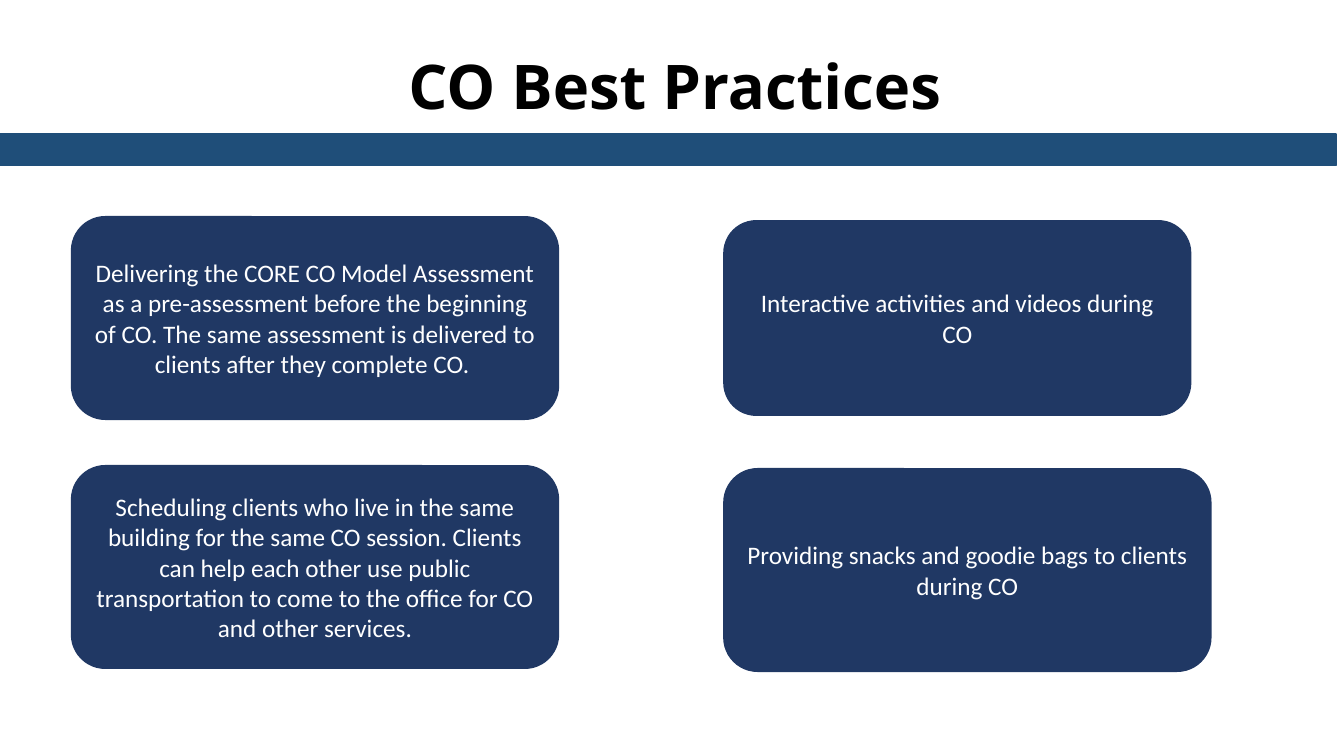
from pptx import Presentation
from pptx.dml.color import RGBColor
from pptx.enum.shapes import MSO_SHAPE
from pptx.enum.text import MSO_ANCHOR, MSO_AUTO_SIZE, PP_ALIGN
from pptx.util import Inches, Pt

RECTANGLE = MSO_SHAPE.RECTANGLE
ROUNDED = MSO_SHAPE.ROUNDED_RECTANGLE
MIDDLE = MSO_ANCHOR.MIDDLE
CENTER = PP_ALIGN.CENTER
NO_AUTOFIT = MSO_AUTO_SIZE.NONE
TITLE_ONLY = 5

COLORS = {"black": "000000", "white": "FFFFFF", "band": "1F4E79", "card": "203864"}

PRACTICES = [
    ("Delivering the CORE CO Model Assessment as a pre-assessment before the beginning of CO. "
     "The same assessment is delivered to clients after they complete CO. ",
     (0.71, 2.15, 4.83, 2.01)),
    ("Scheduling clients who live in the same building for the same CO session. "
     "Clients can help each other use public transportation to come to the office "
     "for CO and other services.",
     (0.71, 4.62, 4.83, 2.01)),
    ("Providing snacks and goodie bags to clients during CO", (7.18, 4.65, 4.83, 2.01)),
    ("Interactive activities and videos during CO", (7.18, 2.19, 4.63, 1.93)),
]


class SlideBuilder:
    title_font = "Open Sans"
    body_font = "Calibri"

    def __init__(self, slide):
        self.slide = slide

    def add_text(self, shape, text, font_name, size, color, bold=False):
        frame = shape.text_frame
        frame.word_wrap = True
        frame.auto_size = NO_AUTOFIT
        frame.vertical_anchor = MIDDLE
        paragraph = frame.paragraphs[0]
        paragraph.alignment = CENTER
        run = paragraph.add_run()
        run.text = text
        run.font.name = font_name
        run.font.size = Pt(size)
        run.font.bold = bold
        run.font.color.rgb = RGBColor.from_string(COLORS[color])
        return paragraph

    def title(self, text, box):
        title = self.slide.shapes.title
        title.left, title.top, title.width, title.height = map(Inches, box)
        paragraph = self.add_text(title, text, self.title_font, 44, "black", bold=True)
        paragraph.line_spacing = 0.9

    def block(self, kind, box, color):
        shape = self.slide.shapes.add_shape(kind, *map(Inches, box))
        shape.shadow.inherit = False
        shape.fill.solid()
        shape.fill.fore_color.rgb = RGBColor.from_string(COLORS[color])
        shape.line.color.rgb = RGBColor.from_string(COLORS[color])
        shape.line.width = Pt(1)
        return shape

    def card(self, text, box):
        shape = self.block(ROUNDED, box, "card")
        self.add_text(shape, text, self.body_font, 18, "white")


def main():
    presentation = Presentation()
    presentation.slide_width = Inches(13.33)
    presentation.slide_height = Inches(7.5)
    slide = presentation.slides.add_slide(presentation.slide_layouts[TITLE_ONLY])
    builder = SlideBuilder(slide)
    builder.title("CO Best Practices", (0.58, 0.47, 12.23, 0.84))
    builder.block(RECTANGLE, (-0.08, 1.33, 13.33, 0.31), "band")
    for text, box in PRACTICES:
        builder.card(text, box)
    presentation.save("out.pptx")


if __name__ == "__main__":
    main()
